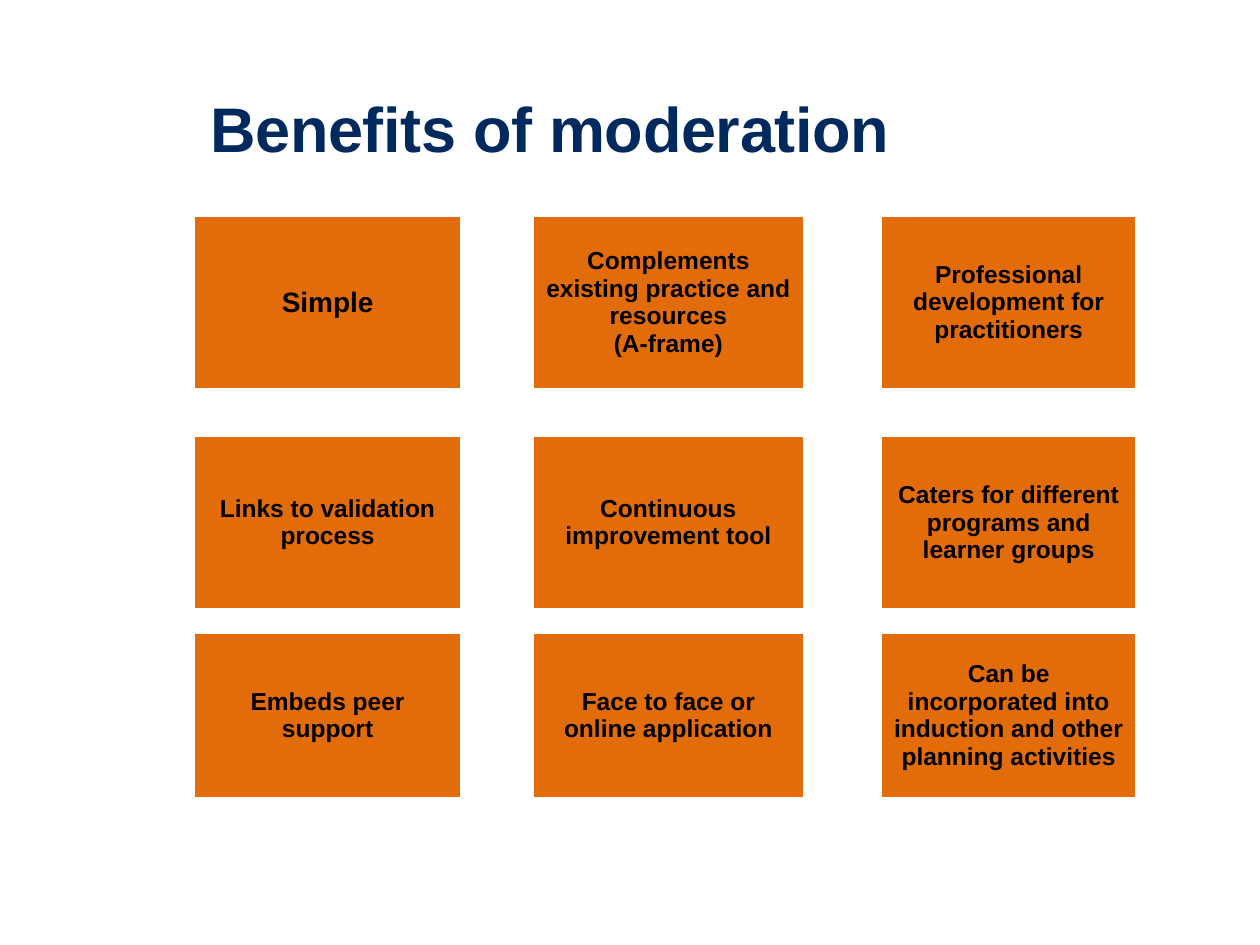
from dataclasses import dataclass

from pptx import Presentation
from pptx.dml.color import RGBColor
from pptx.enum.text import MSO_ANCHOR as Anchor, MSO_AUTO_SIZE as AutoSize, PP_ALIGN as Align
from pptx.oxml.ns import qn
from pptx.util import Cm, Pt


@dataclass(frozen=True)
class Theme:
    font: str = "Arial"
    navy: str = "00295E"
    black: str = "000000"
    orange: str = "E36C0A"
    title_size: int = 36
    lead_size: int = 16
    cell_size: int = 14


THEME = Theme()
NO_STYLE = "{2D5ABB26-0587-4C30-8999-92F81FD0307C}"
TABLE_LEFT = 3.94
COLUMN_WIDTHS = [5.33, 1.5, 5.41, 1.6, 5.11]
UPPER_BENEFITS = [
    ["Simple", "Complements existing practice and resources\n(A-frame)",
     "Professional development for practitioners"],
    [],
    ["Links to validation process", "Continuous improvement tool",
     "Caters for different programs and learner groups"],
]
LOWER_BENEFITS = [
    ["Embeds peer support", "Face to face or online application",
     "Can be incorporated into induction and other planning activities"],
]


def write_text(frame, text, *, size, color, align, gap=0, line_spacing=None, tracking=None):
    lines = text.split("\n")
    for index, line in enumerate(lines):
        para = frame.paragraphs[0] if index == 0 else frame.add_paragraph()
        para.alignment = align
        para.space_before = Pt(gap if index == 0 else 0)
        para.space_after = Pt(gap if index == len(lines) - 1 else 0)
        if line_spacing:
            para.line_spacing = line_spacing
        span = para.add_run()
        span.text = line
        span.font.name = THEME.font
        span.font.size = Pt(size)
        span.font.bold = True
        span.font.color.rgb = RGBColor.from_string(color)
        if tracking:
            span.font._element.set("spc", str(round(tracking * 100)))


def set_title(page, text):
    box = page.shapes.title
    box.left, box.top, box.width, box.height = Cm(4.24), Cm(1.42), Cm(18.14), Cm(1.9)
    frame = box.text_frame
    frame.margin_left = frame.margin_right = frame.margin_top = frame.margin_bottom = 0
    frame.vertical_anchor = Anchor.BOTTOM
    frame.auto_size = AutoSize.NONE
    frame.word_wrap = True
    write_text(frame, text, size=THEME.title_size, color=THEME.navy,
               align=Align.LEFT, line_spacing=0.8, tracking=-0.2)


def fill_benefit(cell, text, size):
    cell.fill.solid()
    cell.fill.fore_color.rgb = RGBColor.from_string(THEME.orange)
    write_text(cell.text_frame, text, size=size, color=THEME.black,
               align=Align.CENTER, gap=6)


def add_benefit_table(page, top, row_heights, benefits, lead=None):
    table = page.shapes.add_table(
        len(row_heights), len(COLUMN_WIDTHS), Cm(TABLE_LEFT), Cm(top),
        Cm(sum(COLUMN_WIDTHS)), Cm(sum(row_heights))).table
    table.first_row = table.horz_banding = False
    table._tbl.tblPr.find(qn("a:tableStyleId")).text = NO_STYLE
    for column, width in zip(table.columns, COLUMN_WIDTHS):
        column.width = Cm(width)
    for row, height in zip(table.rows, row_heights):
        row.height = Cm(height)
    for cell in table.iter_cells():
        cell.margin_left = cell.margin_right = Cm(0.18)
        cell.margin_top = cell.margin_bottom = 0
        cell.vertical_anchor = Anchor.MIDDLE
        cell.fill.background()
    for row_index, texts in enumerate(benefits):
        for index, text in enumerate(texts):
            size = THEME.lead_size if text == lead else THEME.cell_size
            fill_benefit(table.cell(row_index, 2 * index), text, size)


def main():
    deck = Presentation()
    deck.slide_width, deck.slide_height = Cm(25.4), Cm(19.05)
    page = deck.slides.add_slide(deck.slide_layouts[5])
    set_title(page, "Benefits of moderation")
    add_benefit_table(page, 4.37, [3.45, 0.99, 3.45], UPPER_BENEFITS, lead="Simple")
    add_benefit_table(page, 12.78, [3.28], LOWER_BENEFITS)
    deck.save("out.pptx")


if __name__ == "__main__":
    main()
